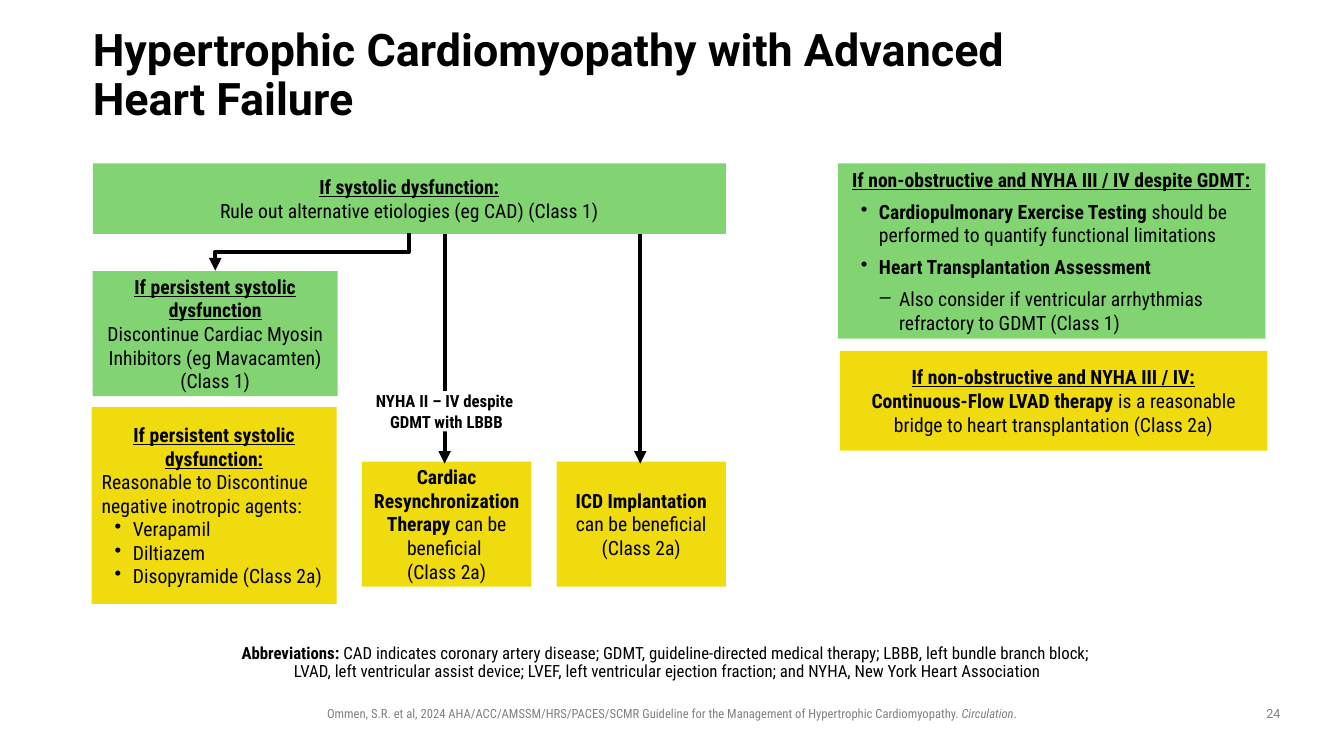
from pptx import Presentation
from pptx.dml.color import RGBColor
from pptx.enum.shapes import MSO_CONNECTOR as Connector, MSO_SHAPE as Shape
from pptx.enum.text import MSO_ANCHOR as Anchor, PP_ALIGN as Align
from pptx.oxml.ns import qn
from pptx.util import Inches, Pt
from lxml.etree import SubElement

BLACK = RGBColor(0, 0, 0)
GRAY = RGBColor(0x80, 0x80, 0x80)
WHITE = RGBColor(0xFF, 0xFF, 0xFF)
CLASS_1_GREEN = RGBColor(0x82, 0xD4, 0x72)
CLASS_2A_YELLOW = RGBColor(0xF0, 0xDB, 0x0E)
CONDENSED = "Roboto Condensed"
HEADING = "bu"  # run styles: b bold, u underlined, i italic


def para(*runs, align=Align.CENTER, bullet=None, indent=0, hang=0, before=0):
    """Describe a paragraph; each run is (text, styles)."""
    return dict(runs=runs, align=align, bullet=bullet, indent=indent,
                hang=hang, before=before)


def bullet(*runs, before=0):
    return para(*runs, align=Align.LEFT, bullet="•", indent=0.31, hang=0.18,
                before=before)


def dash(*runs, before=0):
    return para(*runs, align=Align.LEFT, bullet="–", indent=0.51, hang=0.19,
                before=before)


def write(frame, paragraphs, size=14, font=CONDENSED, color=BLACK, spacing=None,
          anchor=Anchor.TOP, insets=(0.1, 0.05, 0.1, 0.05)):
    frame.word_wrap = True
    frame.vertical_anchor = anchor
    (frame.margin_left, frame.margin_top,
     frame.margin_right, frame.margin_bottom) = map(Inches, insets)
    for number, content in enumerate(paragraphs):
        line = frame.add_paragraph() if number else frame.paragraphs[0]
        line.alignment = content["align"]
        line.space_before = Pt(content["before"])
        if spacing:
            line.line_spacing = spacing
        if content["bullet"]:
            props = line._p.get_or_add_pPr()
            props.set("marL", str(Inches(content["indent"])))
            props.set("indent", str(-Inches(content["hang"])))
            SubElement(props, qn("a:buChar"), char=content["bullet"])
        line.font.name, line.font.size = font, Pt(size)
        line.font.color.rgb = color
        write_runs(line, content["runs"])


def write_runs(line, runs):
    uniform = len({styles for _, styles in runs}) == 1
    if uniform:
        set_styles(line.font, runs[0][1])
    for text, styles in runs:
        for number, piece in enumerate(text.split("\n")):
            if number:
                line.add_line_break()
            run = line.add_run()
            run.text = piece
            if not uniform:
                set_styles(run.font, styles)


def set_styles(font, styles):
    font.bold = "b" in styles
    font.italic = "i" in styles
    font.underline = "u" in styles


def add_text(slide, place, *paragraphs, **layout):
    label = slide.shapes.add_textbox(*map(Inches, place))
    write(label.text_frame, paragraphs, **layout)


def add_box(slide, place, fill, *paragraphs, **layout):
    box = slide.shapes.add_shape(Shape.RECTANGLE, *map(Inches, place))
    box.shadow.inherit = False
    box.fill.solid()
    box.fill.fore_color.rgb = fill
    box.line.fill.background()
    write(box.text_frame, paragraphs, **{"anchor": Anchor.MIDDLE, **layout})


def add_arrow(slide, kind, start, end):
    arrow = slide.shapes.add_connector(kind, *map(Inches, start + end))
    arrow.line.color.rgb = BLACK
    arrow.line.width = Pt(3)
    SubElement(arrow.line._get_or_add_ln(), qn("a:tailEnd"), type="triangle")
    SubElement(arrow._element.spPr, qn("a:effectLst"))
    return arrow


def add_systolic_branch(slide):
    add_box(slide, (0.92, 1.62, 6.28, 0.7), CLASS_1_GREEN,
            para(("If systolic dysfunction:", HEADING)),
            para(("Rule out alternative etiologies (eg CAD) (Class 1)", "")))
    add_box(slide, (0.92, 2.69, 2.43, 1.24), CLASS_1_GREEN,
            para(("If persistent systolic dysfunction", HEADING)),
            para(("Discontinue Cardiac Myosin Inhibitors (eg Mavacamten) "
                  "(Class 1)", "")))
    agents = ("Verapamil", "Diltiazem", "Disopyramide (Class 2a)")
    add_box(slide, (0.91, 4.04, 2.43, 1.95), CLASS_2A_YELLOW,
            para(("If persistent systolic dysfunction:", HEADING)),
            para(("Reasonable to Discontinue negative inotropic agents:", ""),
                 align=Align.LEFT),
            *(bullet((agent, "")) for agent in agents))
    add_box(slide, (3.59, 4.58, 1.68, 1.24), CLASS_2A_YELLOW,
            para(("Cardiac Resynchronization Therapy ", "b"),
                 ("can be beneficial \n(Class 2a)", "")))
    add_box(slide, (5.52, 4.58, 1.68, 1.24), CLASS_2A_YELLOW,
            para(("ICD Implantation ", "b"),
                 ("can be beneficial (Class 2a)", "")))


def add_non_obstructive_branch(slide):
    add_box(slide, (8.31, 1.62, 4.24, 1.74), CLASS_1_GREEN,
            para(("If non-obstructive and NYHA III / IV despite GDMT:", HEADING)),
            bullet(("Cardiopulmonary Exercise Testing ", "b"),
                   ("should be performed to quantify functional limitations", ""),
                   before=6),
            bullet(("Heart Transplantation Assessment", "b"), before=6),
            dash(("Also consider if ventricular arrhythmias refractory to GDMT "
                  "(Class 1)", ""), before=6))
    add_box(slide, (8.33, 3.48, 4.24, 0.99), CLASS_2A_YELLOW,
            para(("If non-obstructive and NYHA III / IV:", HEADING)),
            para(("Continuous-Flow LVAD therapy ", "b"),
                 ("is a reasonable bridge to heart transplantation (Class 2a)", "")))


def add_flow_arrows(slide):
    for x in (4.41, 6.35):
        add_arrow(slide, Connector.STRAIGHT, (x, 2.32), (x, 4.6))
    # Quarter turn makes the elbow leave the top box downwards
    elbow = add_arrow(slide, Connector.ELBOW, (2.91, 1.54), (3.28, 3.46))
    elbow._element.spPr.find(qn("a:xfrm")).set("rot", str(90 * 60000))
    # Condition on the resynchronization arrow
    add_box(slide, (3.71, 3.88, 1.44, 0.4), WHITE,
            para(("NYHA II – IV despite \nGDMT with LBBB", "b")),
            size=12, anchor=Anchor.TOP, insets=(0, 0, 0, 0))


def add_footer(slide):
    add_text(slide, (1.73, 6.35, 9.88, 0.4),
             para(("Abbreviations: ", "b"),
                  ("CAD indicates coronary artery disease; GDMT, guideline-directed "
                   "medical therapy; LBBB, left bundle branch block; \n"
                   "LVAD, left ventricular assist device; LVEF, left ventricular "
                   "ejection fraction; and NYHA, New York Heart Association", "")),
             size=12, spacing=0.9, insets=(0, 0.05, 0.1, 0.05))
    add_text(slide, (2.94, 6.95, 7.45, 0.25),
             para(("Ommen, S.R. et al, 2024 AHA/ACC/AMSSM/HRS/PACES/SCMR Guideline "
                   "for the Management of Hypertrophic Cardiomyopathy. ", ""),
                  ("Circulation", "i"), (".", "")),
             size=9, color=GRAY)
    add_text(slide, (12.42, 6.95, 0.42, 0.26), para(("24", "")),
             size=9, font="Roboto", color=GRAY)


def main():
    deck = Presentation()
    deck.slide_width, deck.slide_height = Inches(13.33), Inches(7.5)
    slide = deck.slides.add_slide(deck.slide_layouts[6])
    # Title
    add_text(slide, (0.92, 0.4, 9.69, 0.72),
             para(("Hypertrophic Cardiomyopathy with Advanced Heart Failure", "b"),
                  align=Align.LEFT),
             size=32, font="Roboto", spacing=0.9, anchor=Anchor.MIDDLE,
             insets=(0, 0, 0, 0))
    # Treatment flow
    add_systolic_branch(slide)
    add_non_obstructive_branch(slide)
    add_flow_arrows(slide)
    # Abbreviations, citation and slide number
    add_footer(slide)
    deck.save("out.pptx")


if __name__ == "__main__":
    main()
